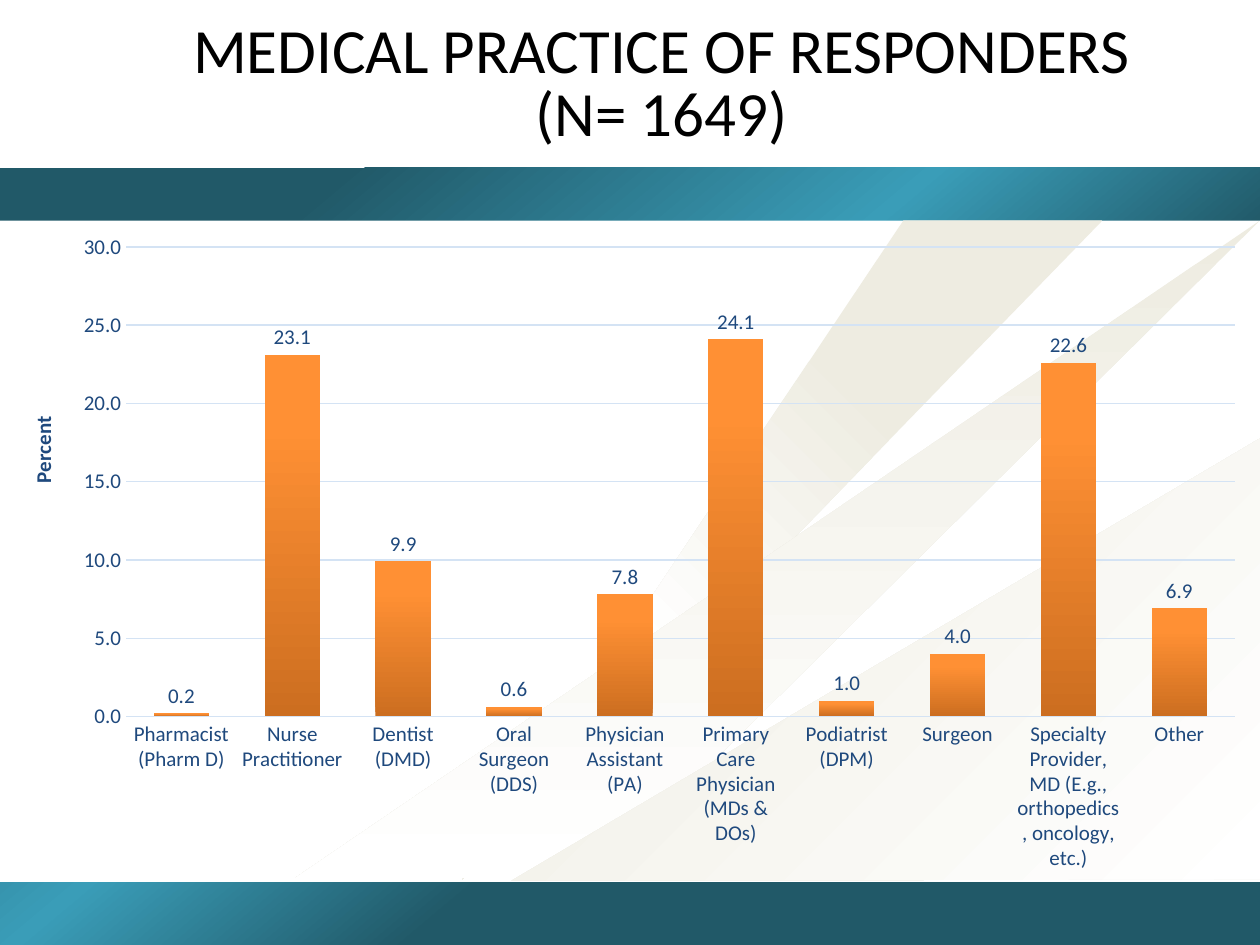
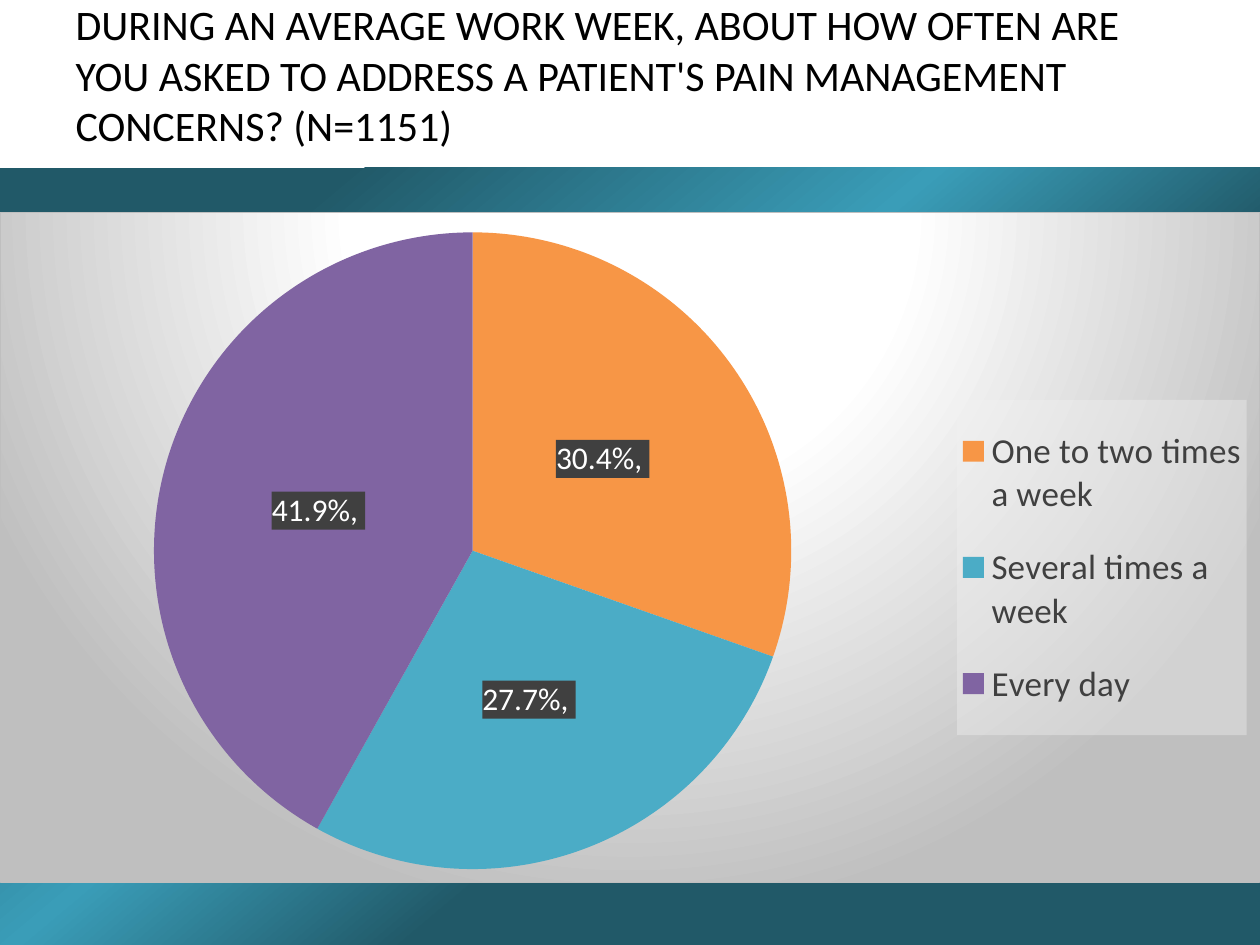
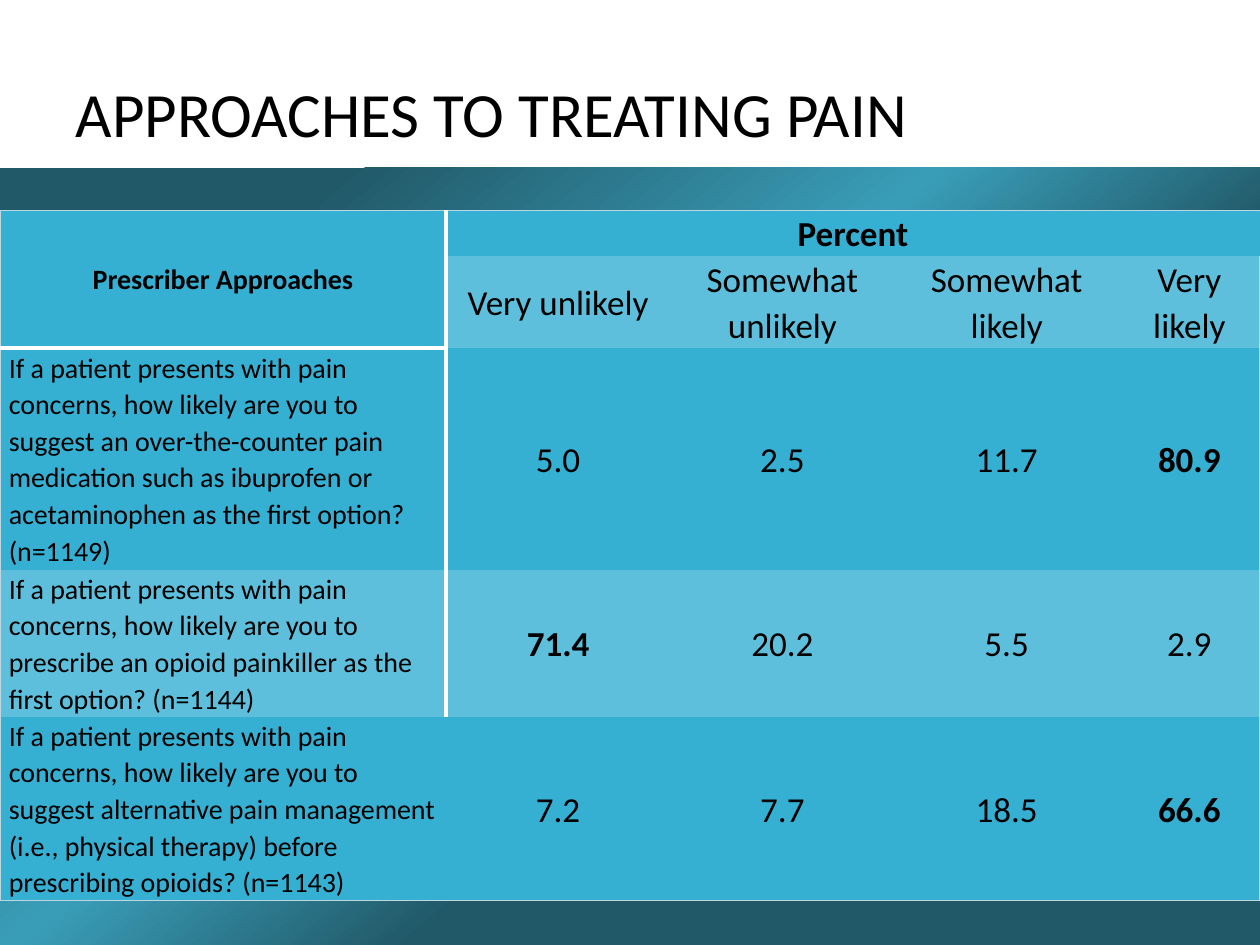
from dataclasses import dataclass
from typing import Optional

from pptx import Presentation
from pptx.chart.chart import Chart
from pptx.chart.data import CategoryChartData
from pptx.dml.color import RGBColor
from pptx.enum.chart import XL_CHART_TYPE, XL_LABEL_POSITION, XL_LEGEND_POSITION, XL_TICK_MARK
from pptx.enum.shapes import MSO_SHAPE
from pptx.enum.text import MSO_ANCHOR, MSO_AUTO_SIZE, PP_ALIGN
from pptx.oxml import parse_xml
from pptx.oxml.ns import nsdecls, qn
from pptx.util import Inches, Pt


# Shared look
@dataclass(frozen=True)
class Theme:
    font: str = "Calibri"
    black: str = "000000"
    white: str = "FFFFFF"
    deep_teal: str = "215968"
    bright_teal: str = "3A9DB8"
    cream: str = "EEECE1"
    navy: str = "1F497D"
    grid: str = "D4E3F4"
    gray: str = "BFBFBF"
    dark_gray: str = "404040"
    legend_gray: str = "F2F2F2"
    table_blue: str = "35AFD2"
    table_light: str = "5DBFDB"
    table_edge: str = "BCD7E1"
    pie: tuple = ("F79646", "4BACC6", "8064A2")
    bar_stops: tuple = ((0, "CC6E20"), (80, "FF9034"), (100, "FF9136"))
    title_size: int = 36
    question_size: int = 24
    axis_size: int = 12
    label_size: int = 18
    cell_size: int = 20
    row_head_size: int = 16


THEME = Theme()
NO_TABLE_STYLE = "{2D5ABB26-0587-4C30-8999-92F81FD0307C}"


@dataclass(frozen=True)
class Ray:
    points: tuple
    stops: tuple
    angle: int


@dataclass(frozen=True)
class Title:
    text: str
    box: tuple = (0.5, 0.3, 9, 0.94)
    size: int = THEME.title_size
    line_pitch: Optional[int] = THEME.title_size
    align: PP_ALIGN = PP_ALIGN.LEFT


FADE = ((0, THEME.cream), (100, THEME.white))
RAYS = (
    Ray(((3.67, 6.98), (7.17, 1.75), (8.75, 1.75)),
        ((31, THEME.cream), (68, THEME.white), (100, THEME.cream)), 135),
    Ray(((10, 1.75), (4.72, 6.97), (2.34, 6.97)), FADE, 90),
    Ray(((10, 3.48), (10, 6.98), (4.06, 6.99)), FADE, 45),
)
BAND_STOPS = ((16, THEME.deep_teal), (43, THEME.bright_teal), (61, THEME.deep_teal))


# XML helpers
def solid_xml(color: str, alpha: int = 100) -> str:
    return (f'<a:solidFill><a:srgbClr val="{color}"><a:alpha val="{alpha * 1000}"/>'
            '</a:srgbClr></a:solidFill>')


def gradient_xml(stops: tuple, direction: str) -> str:
    marks = "".join(f'<a:gs pos="{place * 1000}"><a:srgbClr val="{color}"/></a:gs>'
                    for place, color in stops)
    return (f'<a:gradFill {nsdecls("a")} rotWithShape="1"><a:gsLst>{marks}</a:gsLst>'
            f'{direction}</a:gradFill>')


def linear_xml(stops: tuple, angle: int) -> str:
    return gradient_xml(stops, f'<a:lin ang="{angle * 60000}" scaled="0"/>')


def replace_fill(solid, fill_xml: str) -> None:
    solid.getparent().replace(solid, parse_xml(fill_xml))


def chart_properties(fill_xml: str, line_xml: str = "<a:ln><a:noFill/></a:ln>"):
    return parse_xml(f'<c:spPr {nsdecls("c", "a")}>{fill_xml}{line_xml}</c:spPr>')


def set_layout(parent, index: int, box: tuple, target: str = "") -> None:
    """Place a chart part by fractions of the chart: left, top, width, height."""
    old = parent.find(qn("c:layout"))
    if old is not None:
        parent.remove(old)
    modes = '<c:xMode val="edge"/><c:yMode val="edge"/>'
    sizes = "".join(f'<c:{name} val="{value}"/>' for name, value in zip("xywh", box))
    parent.insert(index, parse_xml(
        f'<c:layout {nsdecls("c")}><c:manualLayout>{target}{modes}{sizes}'
        '</c:manualLayout></c:layout>'))


INNER = '<c:layoutTarget val="inner"/>'


# Drawing helpers
def inches(values: tuple) -> list:
    return [Inches(value) for value in values]


def style_font(font, size: int, color: str, bold: bool = False) -> None:
    font.name, font.size, font.bold = THEME.font, Pt(size), bold
    font.color.rgb = RGBColor.from_string(color)


def plain_fill(shape, color: str) -> None:
    shape.shadow.inherit = False
    shape.line.fill.background()
    shape.fill.solid()
    shape.fill.fore_color.rgb = RGBColor.from_string(color)


def gradient_fill(shape, stops: tuple, angle: int) -> None:
    plain_fill(shape, THEME.white)
    replace_fill(shape.element.xpath("./p:spPr/a:solidFill")[0], linear_xml(stops, angle))


def add_backdrop(page, layout) -> None:
    """Draw the bands and rays, then hand them to the layout all slides use."""
    band = page.shapes.add_shape(MSO_SHAPE.RECTANGLE, *inches((0, 1.33, 10, 6.17)))
    gradient_fill(band, BAND_STOPS, 50)
    panel = page.shapes.add_shape(MSO_SHAPE.RECTANGLE, *inches((0, 1.75, 10, 5.25)))
    plain_fill(panel, THEME.white)
    parts = [band, panel]
    for ray in RAYS:
        first, *rest = [tuple(inches(point)) for point in ray.points]
        builder = page.shapes.build_freeform(*first)
        builder.add_line_segments(rest, close=True)
        outline = builder.convert_to_shape()
        gradient_fill(outline, ray.stops, ray.angle)
        parts.append(outline)
    for index, part in enumerate(parts):
        part.element.xpath(".//p:cNvPr")[0].set("id", str(100 + index))
        layout.shapes.element.insert(2 + index, part.element)


def set_title(page, title: Title) -> None:
    shape = page.shapes.title
    shape.left, shape.top, shape.width, shape.height = inches(title.box)
    frame = shape.text_frame
    frame.text = title.text
    frame.word_wrap, frame.auto_size = True, MSO_AUTO_SIZE.NONE
    frame.vertical_anchor = MSO_ANCHOR.BOTTOM
    for para in frame.paragraphs:
        para.alignment = title.align
        if title.line_pitch:
            para.line_spacing = Pt(title.line_pitch)
        for span in para.runs:
            style_font(span.font, title.size, THEME.black)


def add_chart(page, kind, box: tuple, values: dict, number_format: str) -> Chart:
    data = CategoryChartData(number_format=number_format)
    data.categories = list(values)
    data.add_series("Series 1", list(values.values()))
    chart = page.shapes.add_chart(kind, *inches(box), data).chart
    chart.has_title = False
    style_font(chart.font, 10, THEME.black)
    return chart


def set_chart_area(chart: Chart, properties) -> None:
    chart.element.find(qn("c:chart")).addnext(properties)


# Slide 1: column chart
PRACTICES = {
    "Pharmacist (Pharm D)": 0.2, "Nurse Practitioner": 23.1, "Dentist (DMD)": 9.9,
    "Oral Surgeon (DDS)": 0.6, "Physician Assistant (PA)": 7.8,
    "Primary Care Physician (MDs & DOs)": 24.1, "Podiatrist (DPM)": 1, "Surgeon": 4,
    "Specialty Provider, MD (E.g., orthopedics, oncology, etc.)": 22.6, "Other": 6.9,
}


def add_practice_chart(page) -> None:
    chart = add_chart(page, XL_CHART_TYPE.COLUMN_CLUSTERED, (0, 1.75, 10, 5.25),
                      PRACTICES, "0.0")
    chart.has_legend = False
    set_chart_area(chart, chart_properties("<a:noFill/>"))
    plot = chart.plots[0]
    plot.gap_width, plot.overlap, plot.vary_by_categories = 100, -24, False
    series = plot.series[0]
    series.format.fill.solid()
    replace_fill(chart.element.xpath(".//c:ser/c:spPr/a:solidFill")[0],
                 linear_xml(THEME.bar_stops, 270))
    labels = series.data_labels
    labels.show_value, labels.position = True, XL_LABEL_POSITION.OUTSIDE_END
    labels.number_format, labels.number_format_is_linked = "0.0", False
    style_font(labels.font, THEME.axis_size, THEME.navy)

    # Axes
    category_axis, value_axis = chart.category_axis, chart.value_axis
    for axis in (category_axis, value_axis):
        axis.major_tick_mark = axis.minor_tick_mark = XL_TICK_MARK.NONE
        style_font(axis.tick_labels.font, THEME.axis_size, THEME.navy)
    for line in (category_axis.format.line, value_axis.major_gridlines.format.line):
        line.color.rgb, line.width = RGBColor.from_string(THEME.grid), Pt(0.75)
    value_axis.format.line.fill.background()
    value_axis.minimum_scale, value_axis.maximum_scale, value_axis.major_unit = 0, 30, 5
    value_axis.tick_labels.number_format = "0.0"
    value_axis.tick_labels.number_format_is_linked = False
    para = value_axis.axis_title.text_frame.paragraphs[0]
    para.text = "Percent"
    style_font(para.runs[0].font, THEME.axis_size, THEME.navy, bold=True)
    set_layout(chart.element.xpath(".//c:valAx/c:title")[0], 1, (0.02, 0.29))
    set_layout(chart.element.xpath(".//c:plotArea")[0], 0, (0.1, 0.04, 0.88, 0.71), INNER)


# Slide 2: pie chart
FREQUENCIES = {"One to two times a week": 0.304, "Several times a week": 0.277,
               "Every day": 0.419}


def add_frequency_chart(page) -> None:
    chart = add_chart(page, XL_CHART_TYPE.PIE, (0, 1.68, 10, 5.33), FREQUENCIES, "0.0%")
    glow = gradient_xml(((0, THEME.white), (39, THEME.white), (100, THEME.gray)),
                        '<a:path path="circle"><a:fillToRect l="50000" t="-80000" '
                        'r="50000" b="180000"/></a:path>')
    set_chart_area(chart, chart_properties(
        glow, f'<a:ln w="9525">{solid_xml(THEME.gray)}</a:ln>'))
    plot = chart.plots[0]
    plot.vary_by_categories = True
    series = plot.series[0]
    labels = series.data_labels
    labels.show_value = labels.show_percentage = True
    labels.position = XL_LABEL_POSITION.CENTER
    labels.number_format, labels.number_format_is_linked = "0.0%", False
    style_font(labels.font, THEME.label_size, THEME.white, bold=True)
    for index, (color, share) in enumerate(zip(THEME.pie, FREQUENCIES.values())):
        point = series.points[index]
        point.format.fill.solid()
        point.format.fill.fore_color.rgb = RGBColor.from_string(color)
        para = point.data_label.text_frame.paragraphs[0]
        para.text = f"{share:.1%}, "
        style_font(para.runs[0].font, THEME.label_size, THEME.white)
        point.data_label.position = XL_LABEL_POSITION.CENTER
    for text in chart.element.xpath(".//c:dLbl/c:tx"):
        text.addnext(chart_properties(solid_xml(THEME.dark_gray, 85)))

    # Legend
    chart.has_legend = True
    legend = chart.legend
    legend.position, legend.include_in_layout = XL_LEGEND_POSITION.RIGHT, False
    style_font(legend.font, 20, THEME.dark_gray)
    legend_element = chart.element.xpath(".//c:legend")[0]
    set_layout(legend_element, 1, (0.76, 0.28, 0.23, 0.5))
    legend_element.find(qn("c:overlay")).addnext(
        chart_properties(solid_xml(THEME.legend_gray, 39)))
    set_layout(chart.element.xpath(".//c:plotArea")[0], 0, (0.12, 0.03, 0.51, 0.95), INNER)


# Slide 3: table
CHOICES = ("Very unlikely", "Somewhat unlikely", "Somewhat likely", "Very likely")
QUESTION_START = "If a patient presents with pain concerns, how likely are you to "
APPROACHES = (
    ("suggest an over-the-counter pain medication such as ibuprofen or acetaminophen "
     "as the first option? (n=1149)", (5.0, 2.5, 11.7, 80.9)),
    ("prescribe an opioid painkiller as the first option? (n=1144)", (71.4, 20.2, 5.5, 2.9)),
    ("suggest alternative pain management (i.e., physical therapy) before prescribing "
     "opioids? (n=1143)", (7.2, 7.7, 18.5, 66.6)),
)
COLUMN_WIDTHS = (3.54, 1.78, 1.78, 1.78, 1.12)
ROW_HEIGHTS = (0.34, 0.71, 1.76, 1.17, 1.43)


def fill_cell(cell, text: str, size: int = THEME.cell_size, bold: bool = False,
              align: PP_ALIGN = PP_ALIGN.CENTER) -> None:
    para = cell.text_frame.paragraphs[0]
    para.text = text
    para.alignment, para.line_spacing = align, 1.07
    style_font(para.runs[0].font, size, THEME.black, bold)


def set_borders(cell, row: int, column: int) -> None:
    """Thin outer frame, with white rules right of and below the row heading."""
    last_row, last_column = len(ROW_HEIGHTS) - 1, len(COLUMN_WIDTHS) - 1
    edge, heading = (THEME.table_edge, 0.75), column == 0
    borders = {
        "L": edge if heading else None,
        "R": edge if column == last_column
        else (THEME.white, 2) if heading and row < last_row else None,
        "T": edge if row == 0 else None,
        "B": edge if row == last_row else (THEME.white, 3) if heading and row < 2 else None,
    }
    properties = cell._tc.get_or_add_tcPr()
    drawn = [(side, border) for side, border in borders.items() if border]
    for index, (side, (color, width)) in enumerate(drawn):
        properties.insert(index, parse_xml(
            f'<a:ln{side} {nsdecls("a")} w="{Pt(width)}">{solid_xml(color)}</a:ln{side}>'))


def add_approach_table(page) -> None:
    frame = page.shapes.add_table(len(ROW_HEIGHTS), len(COLUMN_WIDTHS),
                                  *inches((0, 1.67, 10, 5.41)))
    table = frame.table
    table.first_row = table.horz_banding = False
    frame.element.xpath(".//a:tableStyleId")[0].text = NO_TABLE_STYLE
    for column, width in zip(table.columns, COLUMN_WIDTHS):
        column.width = Inches(width)
    for row, height in zip(table.rows, ROW_HEIGHTS):
        row.height = Inches(height)

    # Fills, margins and rules
    for row in range(len(ROW_HEIGHTS)):
        for column in range(len(COLUMN_WIDTHS)):
            cell = table.cell(row, column)
            light = row == 3 or (row == 1 and column > 0)
            cell.fill.solid()
            cell.fill.fore_color.rgb = RGBColor.from_string(
                THEME.table_light if light else THEME.table_blue)
            cell.vertical_anchor = MSO_ANCHOR.MIDDLE
            cell.margin_left = cell.margin_right = Inches(0.07)
            cell.margin_top = cell.margin_bottom = 0
            set_borders(cell, row, column)
    table.cell(0, 0).merge(table.cell(1, 0))
    table.cell(0, 1).merge(table.cell(0, 4))

    # Wording
    fill_cell(table.cell(0, 0), "Prescriber Approaches", THEME.row_head_size, bold=True)
    fill_cell(table.cell(0, 1), "Percent", bold=True)
    for column, choice in enumerate(CHOICES, start=1):
        fill_cell(table.cell(1, column), choice)
    for row, (question, shares) in enumerate(APPROACHES, start=2):
        fill_cell(table.cell(row, 0), QUESTION_START + question, THEME.row_head_size,
                  align=PP_ALIGN.LEFT)
        for column, share in enumerate(shares, start=1):
            fill_cell(table.cell(row, column), f"{share:.1f}", bold=share == max(shares))


SLIDES = (
    (Title("MEDICAL PRACTICE OF RESPONDERS\v(N= 1649)", (0.5, 0.08, 9.5, 1.15),
           align=PP_ALIGN.CENTER), add_practice_chart),
    (Title("DURING AN AVERAGE WORK WEEK, ABOUT HOW OFTEN ARE YOU ASKED TO ADDRESS A "
           "PATIENT'S PAIN MANAGEMENT CONCERNS? (N=1151)", size=THEME.question_size,
           line_pitch=None), add_frequency_chart),
    (Title("APPROACHES TO TREATING PAIN"), add_approach_table),
)


def main() -> None:
    deck = Presentation()
    deck.slide_width, deck.slide_height = Inches(10), Inches(7.5)
    title_only = deck.slide_layouts[5]
    pages = [deck.slides.add_slide(title_only) for _ in SLIDES]
    add_backdrop(pages[0], title_only)
    for page, (title, add_content) in zip(pages, SLIDES):
        set_title(page, title)
        add_content(page)
    deck.save("out.pptx")


if __name__ == "__main__":
    main()
